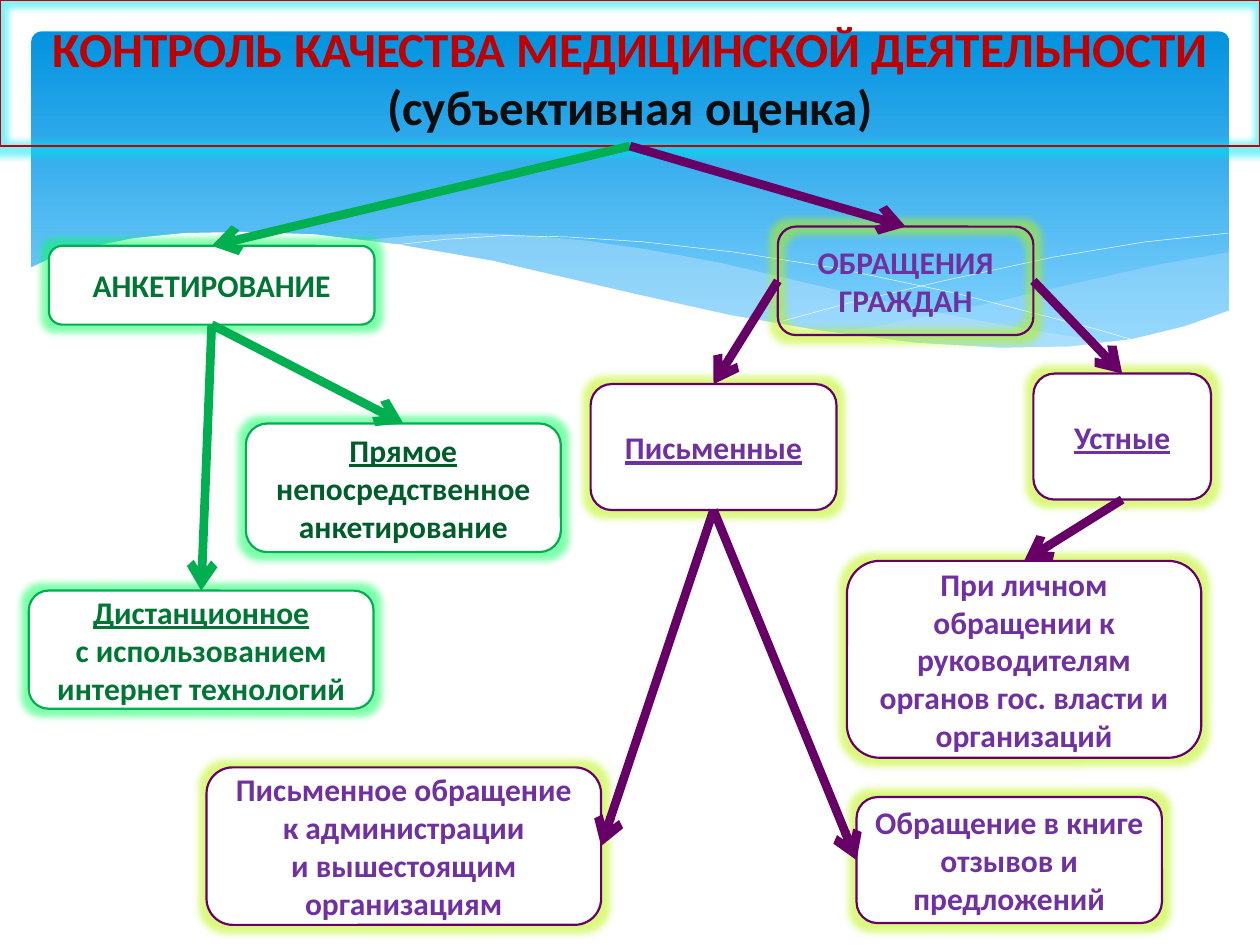
from dataclasses import dataclass

from lxml import etree
from pptx import Presentation
from pptx.dml.color import RGBColor
from pptx.enum.shapes import MSO_CONNECTOR, MSO_SHAPE
from pptx.enum.text import MSO_ANCHOR, MSO_AUTO_SIZE, PP_ALIGN
from pptx.oxml.ns import qn
from pptx.util import Pt

ROUNDED = MSO_SHAPE.ROUNDED_RECTANGLE
STRAIGHT = MSO_CONNECTOR.STRAIGHT
MIDDLE = MSO_ANCHOR.MIDDLE
NO_FIT = MSO_AUTO_SIZE.NONE
CENTER = PP_ALIGN.CENTER
TOP, LEFT, BOTTOM, RIGHT = range(4)

FONT = "Calibri"
WHITE, PALE_BLUE = "FFFFFF", "C6E7FC"
GREEN, DARK_GREEN, DEEP_GREEN = "00B050", "007635", "005C2A"
PLUM, VIOLET = "660066", "7030A0"
RED, NEAR_BLACK = "C00000", "0D0D0D"
GLOWS = {GREEN: "00FF5A", PLUM: "B8F400", RED: "00E6F0"}


@dataclass
class Wave:
    points: list[tuple[float, float]]
    fill: str | None = None
    opacity: int = 100


@dataclass
class Box:
    key: str
    left: float
    top: float
    width: float
    height: float
    text: str
    outline: str = PLUM
    color: str = VIOLET
    fill: str | None = WHITE
    underlined: bool = False


@dataclass
class Link:
    source: str
    source_side: int
    target: str
    target_side: int
    color: str = PLUM


WAVES = [
    Wave([(702.7, 144), (663, 151), (620, 160.6), (560.9, 174.2), (508.3, 185),
          (475.9, 190.8), (507, 195), (545, 198.4), (586, 200.2), (628, 197.3),
          (657.4, 192.2), (683.3, 185), (702.7, 177.8)], PALE_BLUE, 29),
    Wave([(643, 196.6), (602.6, 190.8), (558, 182.9), (508.3, 172.8), (452.9, 159.8),
          (409.7, 149.8), (370, 142.6), (334.8, 137.5), (302.4, 134.6), (273.6, 133.2),
          (236.2, 134.6), (205.9, 137.5), (246.2, 143.3), (290.9, 151.9), (323.3, 159.8),
          (381.6, 172.8), (432.7, 183.6), (478.8, 191.5), (520, 197.3), (556.6, 199.4),
          (589, 200.2), (617, 199.4)], PALE_BLUE, 40),
    Wave([(222.5, 140.4), (254.2, 136.8), (288.7, 134.6), (324, 135.4), (367.2, 138.2),
          (419, 144), (478.8, 153.4), (547.2, 167.8), (625.7, 187.9), (653, 195.8)]),
    Wave([(441.4, 185), (483.8, 173.5), (538.6, 160.6), (602, 146.9), (654.5, 138.2),
          (702, 133.2)]),
    Wave([(16.6, 153.4), (28.8, 147.6), (48.2, 141.8), (76.3, 136.1), (105, 133.2),
          (139, 132.5), (180, 133.9), (227.5, 139.7), (281.5, 149), (321.8, 158.4),
          (362.2, 167.8), (416.9, 180), (466.6, 188.6), (522.7, 195.8), (571, 198.7),
          (612, 198), (647.3, 193.7), (676.8, 186.5), (703.4, 177.1), (703.4, 236.9),
          (16.6, 236.9)], WHITE),
]

BOXES = [
    Box("survey", 28, 140.5, 186, 45, "АНКЕТИРОВАНИЕ", GREEN, DARK_GREEN),
    Box("appeals", 444.5, 129.5, 146, 62, "ОБРАЩЕНИЯ ГРАЖДАН", fill=None),
    Box("written", 337.5, 219.5, 140.5, 72, "Письменные", underlined=True),
    Box("letter", 118, 438.5, 225.5, 90,
        "Письменное обращение\nк администрации\nи вышестоящим организациям"),
    Box("book", 489.5, 455.5, 174.5, 72, "Обращение в книге отзывов и предложений"),
    Box("oral", 590.5, 213.5, 101.5, 72, "Устные", underlined=True),
    Box("in_person", 484, 320.5, 202.5, 112.5,
        "При личном обращении к руководителям органов гос. власти и организаций"),
    Box("direct", 140.5, 242, 180, 73.5, "Прямое\nнепосредственное анкетирование",
        GREEN, DEEP_GREEN, underlined=True),
    Box("remote", 16.5, 337.5, 197, 67.5,
        "Дистанционное\nс использованием интернет технологий",
        GREEN, DARK_GREEN, underlined=True),
]

LINKS = [
    Link("title", BOTTOM, "survey", TOP, GREEN),
    Link("title", BOTTOM, "appeals", TOP),
    Link("survey", BOTTOM, "direct", TOP, GREEN),
    Link("survey", BOTTOM, "remote", TOP, GREEN),
    Link("appeals", LEFT, "written", TOP),
    Link("appeals", RIGHT, "oral", TOP),
    Link("oral", BOTTOM, "in_person", TOP),
    Link("written", BOTTOM, "book", LEFT),
    Link("written", BOTTOM, "letter", RIGHT),
]


def rgb(value: str) -> RGBColor:
    return RGBColor.from_string(value)


def paint(shape, color: str | None) -> None:
    if color is None:
        shape.fill.background()
    else:
        shape.fill.solid()
        shape.fill.fore_color.rgb = rgb(color)


def add_outline(shape, color: str) -> None:
    shape.line.color.rgb = rgb(color)
    shape.line.width = Pt(1.25)
    shape.shadow.inherit = False
    effects = shape.element.spPr.find(qn("a:effectLst"))
    glow = etree.SubElement(effects, qn("a:glow"), rad=str(Pt(8)))
    tint = etree.SubElement(glow, qn("a:srgbClr"), val=GLOWS[color])
    etree.SubElement(tint, qn("a:alpha"), val="50000")


def style_text(paragraph, size: float, color: str, underlined: bool = False) -> None:
    paragraph.alignment = CENTER
    for run in paragraph.runs:
        run.font.name = FONT
        run.font.size = Pt(size)
        run.font.bold = True
        run.font.underline = underlined
        run.font.color.rgb = rgb(color)


def draw_backdrop(slide) -> None:
    panel = slide.shapes.add_shape(ROUNDED, Pt(18), Pt(18), Pt(684.5), Pt(194.5))
    panel.adjustments[0] = 0.03
    panel.shadow.inherit = False
    panel.line.fill.background()
    panel.fill.gradient()
    panel.fill.gradient_angle = 270
    for stop, position, color in zip(panel.fill.gradient_stops, (0, 0.9), ("0293E0", "83D3FE")):
        stop.position = position
        stop.color.rgb = rgb(color)


def draw_wave(slide, wave: Wave) -> None:
    start, *rest = [(Pt(x), Pt(y)) for x, y in wave.points]
    builder = slide.shapes.build_freeform(*start)
    builder.add_line_segments(rest, close=wave.fill is not None)
    curve = builder.convert_to_shape()
    curve.shadow.inherit = False
    paint(curve, wave.fill)
    if wave.fill is None:
        curve.line.color.rgb = rgb(WHITE)
        curve.line.width = Pt(0.25)
        return
    curve.line.fill.background()
    tint = curve.element.spPr.find(qn("a:solidFill"))[0]
    etree.SubElement(tint, qn("a:alpha"), val=str(wave.opacity * 1000))


def draw_title(slide):
    title = slide.shapes.title
    title.element.getparent().append(title.element)
    title.left, title.top, title.width, title.height = Pt(0), Pt(0), Pt(720), Pt(83.5)
    geometry = etree.Element(qn("a:prstGeom"), prst="roundRect")
    etree.SubElement(geometry, qn("a:avLst"))
    title.element.spPr.insert(1, geometry)
    paint(title, None)
    add_outline(title, RED)
    frame = title.text_frame
    frame.text = "КОНТРОЛЬ КАЧЕСТВА МЕДИЦИНСКОЙ ДЕЯТЕЛЬНОСТИ\n(субъективная оценка)"
    frame.word_wrap = True
    frame.auto_size = NO_FIT
    frame.vertical_anchor = MIDDLE
    frame.margin_top = Pt(8)
    for paragraph, color in zip(frame.paragraphs, (RED, NEAR_BLACK)):
        style_text(paragraph, 28, color)
    return title


def draw_box(slide, box: Box):
    shape = slide.shapes.add_shape(
        ROUNDED, Pt(box.left), Pt(box.top), Pt(box.width), Pt(box.height))
    paint(shape, box.fill)
    add_outline(shape, box.outline)
    frame = shape.text_frame
    frame.text = box.text
    frame.word_wrap = True
    frame.vertical_anchor = MIDDLE
    for index, paragraph in enumerate(frame.paragraphs):
        style_text(paragraph, 18, box.color, box.underlined and index == 0)
    return shape


def draw_link(slide, link: Link, nodes: dict) -> None:
    arrow = slide.shapes.add_connector(STRAIGHT, Pt(0), Pt(0), Pt(0), Pt(0))
    arrow.begin_connect(nodes[link.source], link.source_side)
    arrow.end_connect(nodes[link.target], link.target_side)
    arrow.line.color.rgb = rgb(link.color)
    arrow.line.width = Pt(5)
    etree.SubElement(arrow.line._get_or_add_ln(), qn("a:tailEnd"), type="arrow")
    etree.SubElement(arrow.element.spPr, qn("a:effectLst"))


def main() -> None:
    presentation = Presentation()
    presentation.slide_width, presentation.slide_height = Pt(720), Pt(540)
    slide = presentation.slides.add_slide(presentation.slide_layouts[5])
    draw_backdrop(slide)
    for wave in WAVES:
        draw_wave(slide, wave)
    nodes = {"title": draw_title(slide)}
    for box in BOXES:
        nodes[box.key] = draw_box(slide, box)
    for link in LINKS:
        draw_link(slide, link, nodes)
    presentation.save("out.pptx")


if __name__ == "__main__":
    main()
